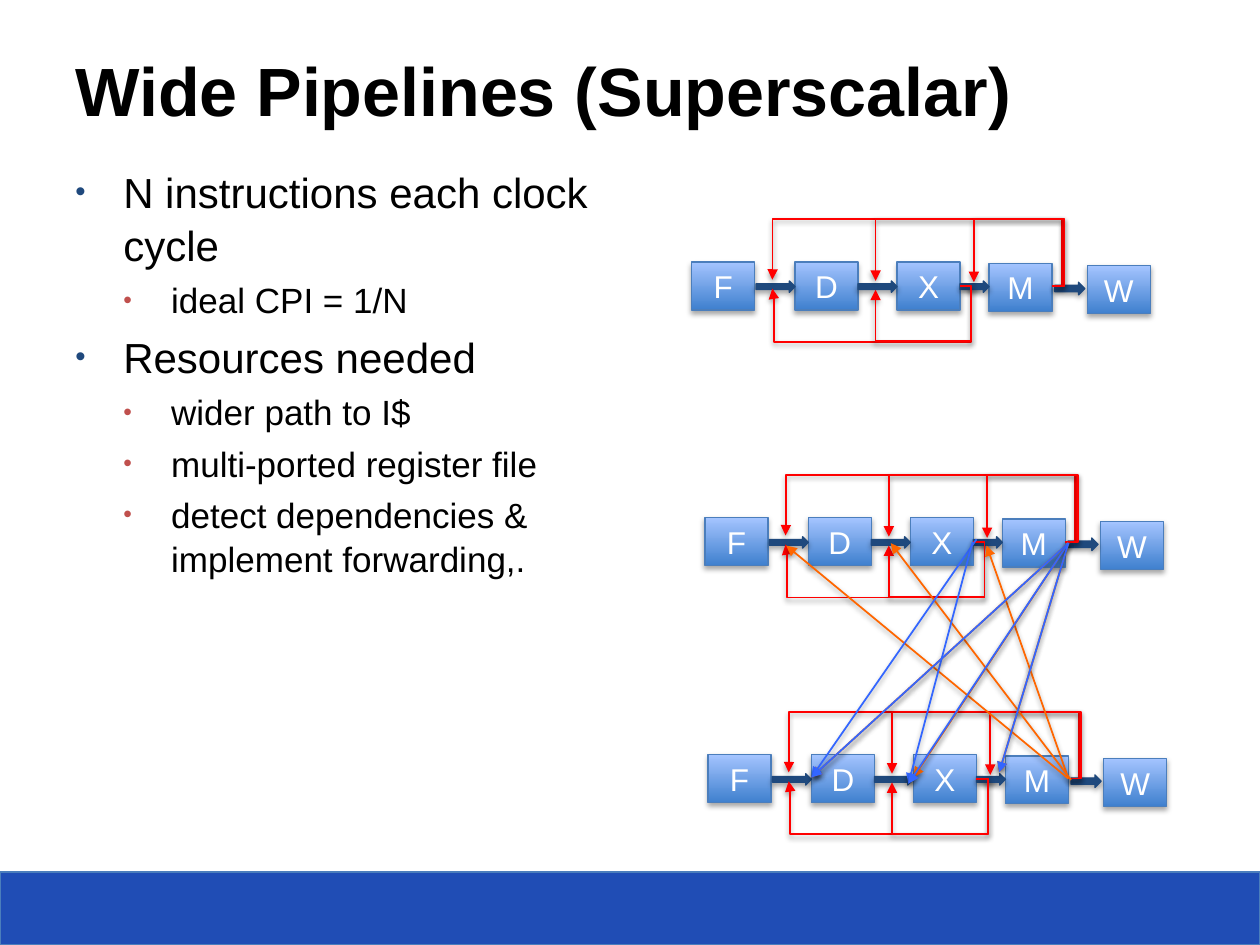
from lxml import etree
from pptx import Presentation
from pptx import util as u
from pptx.dml.color import RGBColor
from pptx.enum import shapes, text
from pptx.oxml.ns import qn

COLORS = {
    "white": "FFFFFF", "black": "000000", "footer": "204DB5", "outline": "4B7EBC",
    "navy": "1F497D", "brick": "C0504D", "stage_dark": "3F80CE", "stage_light": "A4C4FF",
    "bypass": "FF0000", "from_lower": "FF6600", "from_upper": "3366FF",
}
WIDTH, HEIGHT = u.Inches(10), u.Inches(7.5)
COLUMNS, ROWS = 100, 75  # grid over the whole slide
FONT = "Arial"

BULLETS = [
    (0, "N instructions each clock cycle"),
    (1, "ideal CPI = 1/N"),
    (0, "Resources needed"),
    (1, "wider path to I$"),
    (1, "multi-ported register file"),
    (1, "detect dependencies & implement forwarding,."),
]
LEVELS = [(24, "navy"), (20, "brick")]  # text size, bullet colour

# Pipeline parts, in grid units from the top left of stage F
PIPELINES = [(54.9, 20.8), (55.95, 41.1), (56.2, 59.9)]
STAGES = [("F", 0, 0), ("D", 8.2, 0), ("X", 16.3, 0), ("M", 23.6, 0.1), ("W", 31.4, 0.3)]
ARROWS = [(13.2, 1.5, 3.1, 0.9), (5.1, 1.5, 3.1, 0.9), (21.3, 1.5, 2.3, 0.9), (28.8, 1.6, 2.4, 1)]
# Start, turn column, lane row, end, column of the last turn (None: enter vertically)
BYPASSES = [
    ((28.6, 1.9), 29.4, -3.4, (6.4, 1.4), 6.42),
    ((28.6, 1.9), 29.5, -3.4, (14.6, 1.5), None),
    ((28.7, 1.9), 29.6, -3.4, (22.4, 1.6), None),
    ((21.3, 1.9), 22.2, 6.3, (6.4, 2.1), 6.5),
    ((21.3, 1.9), 22.2, 6.3, (14.6, 2.2), None),
]

# Forwarding between the two pipelines, in slide grid units
M_UPPER, M_LOWER = (84.8, 43.1), (84.8, 61.8)
X_INPUT, D_INPUT, M_INPUT = (72.1, 62.2), (64.4, 61.7), (79.3, 61.3)
CROSS_LINKS = [
    ("from_lower", M_UPPER, M_INPUT),
    ("from_lower", M_LOWER, (78.3, 43.3)),
    ("from_lower", (85, 61.9), (70.7, 43.1)),
    ("from_lower", M_LOWER, (62.4, 43.3)),
    ("from_lower", M_UPPER, (72.5, 61.7)),
    ("from_lower", M_UPPER, D_INPUT),
    ("from_upper", (77.5, 42.8), D_INPUT),
    ("from_upper", (77.2, 43), X_INPUT),
    ("from_upper", M_UPPER, D_INPUT),
    ("from_upper", M_UPPER, X_INPUT),
    ("from_upper", M_UPPER, M_INPUT),
]


def rgb(name):
    return RGBColor.from_string(COLORS[name])


def grid(column, row):
    return int(WIDTH * column / COLUMNS), int(HEIGHT * row / ROWS)


def child(parent, tag, **attributes):
    return etree.SubElement(parent, qn(tag), {k: str(v) for k, v in attributes.items()})


def add_shadow(effects, distance, opacity):
    shadow = child(effects, "a:outerShdw", blurRad=u.Pt(3.1), dist=u.Pt(distance),
                   dir=90 * 60000, rotWithShape=0)
    color = child(shadow, "a:srgbClr", val=COLORS["black"])
    child(color, "a:alpha", val=opacity * 1000)


def add_block(container, kind, left, top, width, height, fill, line, shadow=True):
    shape = container.add_shape(kind, *grid(left, top), *grid(width, height))
    shape.shadow.inherit = False
    if shadow:
        add_shadow(shape.element.spPr.find(qn("a:effectLst")), 1.8, 35)
    shape.fill.solid()
    shape.fill.fore_color.rgb = rgb(fill)
    shape.line.color.rgb = rgb(line)
    shape.line.width = u.Pt(0.75)
    return shape


def add_stage(container, label, left, top):
    stage = add_block(container, shapes.MSO_SHAPE.RECTANGLE, left, top, 5, 3.8,
                      "stage_light", "outline")
    stage.fill.gradient()
    stage.fill.gradient_angle = 90
    for stop, position, name in zip(stage.fill.gradient_stops, (0, 1),
                                    ("stage_dark", "stage_light")):
        stop.position = position
        stop.color.rgb = rgb(name)
    stage.text_frame.vertical_anchor = text.MSO_ANCHOR.MIDDLE
    paragraph = stage.text_frame.paragraphs[0]
    paragraph.text = label
    paragraph.alignment = text.PP_ALIGN.CENTER
    set_font(paragraph, 18, "white")


def add_link(container, kind, start, end, color):
    link = container.add_connector(kind, *grid(*start), *grid(*end))
    link.line.color.rgb = rgb(color)
    link.line.width = u.Pt(1)
    properties = link.element.spPr
    child(properties.find(qn("a:ln")), "a:tailEnd", type="triangle")
    add_shadow(child(properties, "a:effectLst"), 1.6, 38)
    return link


def add_bypass(container, start, turn, lane, end, last_turn):
    link = add_link(container, shapes.MSO_CONNECTOR.ELBOW, start, end, "bypass")
    run, rise = end[0] - start[0], end[1] - start[1]
    bends = [(turn - start[0]) / run, (lane - start[1]) / rise]
    if last_turn is not None:
        bends.append((last_turn - start[0]) / run)
    geometry = link.element.spPr.find(qn("a:prstGeom"))
    geometry.set("prst", f"bentConnector{len(bends) + 2}")
    guides = geometry.find(qn("a:avLst"))
    if guides is None:
        guides = child(geometry, "a:avLst")
    for number, bend in enumerate(bends, 1):
        child(guides, "a:gd", name=f"adj{number}", fmla=f"val {round(bend * 100000)}")


def add_pipeline(slide, left, top):
    def place(point):
        return left + point[0], top + point[1]

    container = slide.shapes.add_group_shape().shapes
    add_block(container, shapes.MSO_SHAPE.RECTANGLE, *place((21.9, 1.6)), 0.9, 0.6,
              "white", "white")
    for label, *corner in STAGES:
        add_stage(container, label, *place(corner))
    for *corner, width, height in ARROWS:
        add_block(container, shapes.MSO_SHAPE.RIGHT_ARROW, *place(corner), width, height,
                  "navy", "navy")
    for start, turn, lane, end, last_turn in BYPASSES:
        add_bypass(container, place(start), left + turn, top + lane, place(end),
                   None if last_turn is None else left + last_turn)


def set_font(paragraph, size, color, bold=False):
    font = paragraph.font
    font.name, font.size, font.bold = FONT, u.Pt(size), bold
    font.color.rgb = rgb(color)


def add_text_box(slide, left, top, width, height):
    box = slide.shapes.add_textbox(*grid(left, top), *grid(width, height))
    box.text_frame.word_wrap = True
    return box


def add_title(slide, words):
    box = add_text_box(slide, 5, 2.5, 92.2, 8.3)
    box.fill.solid()
    box.fill.fore_color.rgb = rgb("white")
    child(box.element.spPr.find(".//" + qn("a:srgbClr")), "a:alpha", val=75000)
    box.text_frame.vertical_anchor = text.MSO_ANCHOR.BOTTOM
    paragraph = box.text_frame.paragraphs[0]
    paragraph.text = words
    set_font(paragraph, 39, "black", bold=True)


def add_bullets(slide):
    frame = add_text_box(slide, 5, 12.5, 44.2, 55.8).text_frame
    for index, (level, words) in enumerate(BULLETS):
        paragraph = frame.add_paragraph() if index else frame.paragraphs[0]
        size, color = LEVELS[level]
        paragraph.text = words
        paragraph.level = level
        properties = paragraph._p.get_or_add_pPr()
        properties.set("marL", str(u.Inches(0.38 * (level + 1))))
        properties.set("indent", str(u.Inches(-0.38)))
        child(child(properties, "a:buClr"), "a:srgbClr", val=COLORS[color])
        child(properties, "a:buSzPct", val=70000)
        child(properties, "a:buFont", typeface=FONT)
        child(properties, "a:buChar", char="•")
        paragraph.line_spacing = 1.05
        if index:
            paragraph.space_before = u.Pt(size * 0.2)
        set_font(paragraph, size, "black")


def main():
    presentation = Presentation()
    presentation.slide_width, presentation.slide_height = WIDTH, HEIGHT
    slide = presentation.slides.add_slide(presentation.slide_layouts[6])
    # Footer band and text
    add_block(slide.shapes, shapes.MSO_SHAPE.RECTANGLE, 0, 69.2, COLUMNS, 5.8,
              "footer", "outline", shadow=False)
    add_title(slide, "Wide Pipelines (Superscalar)")
    add_bullets(slide)
    # Single pipeline above, two linked pipelines below
    for corner in PIPELINES:
        add_pipeline(slide, *corner)
    for color, start, end in CROSS_LINKS:
        add_link(slide.shapes, shapes.MSO_CONNECTOR.STRAIGHT, start, end, color)
    presentation.save("out.pptx")


if __name__ == "__main__":
    main()
